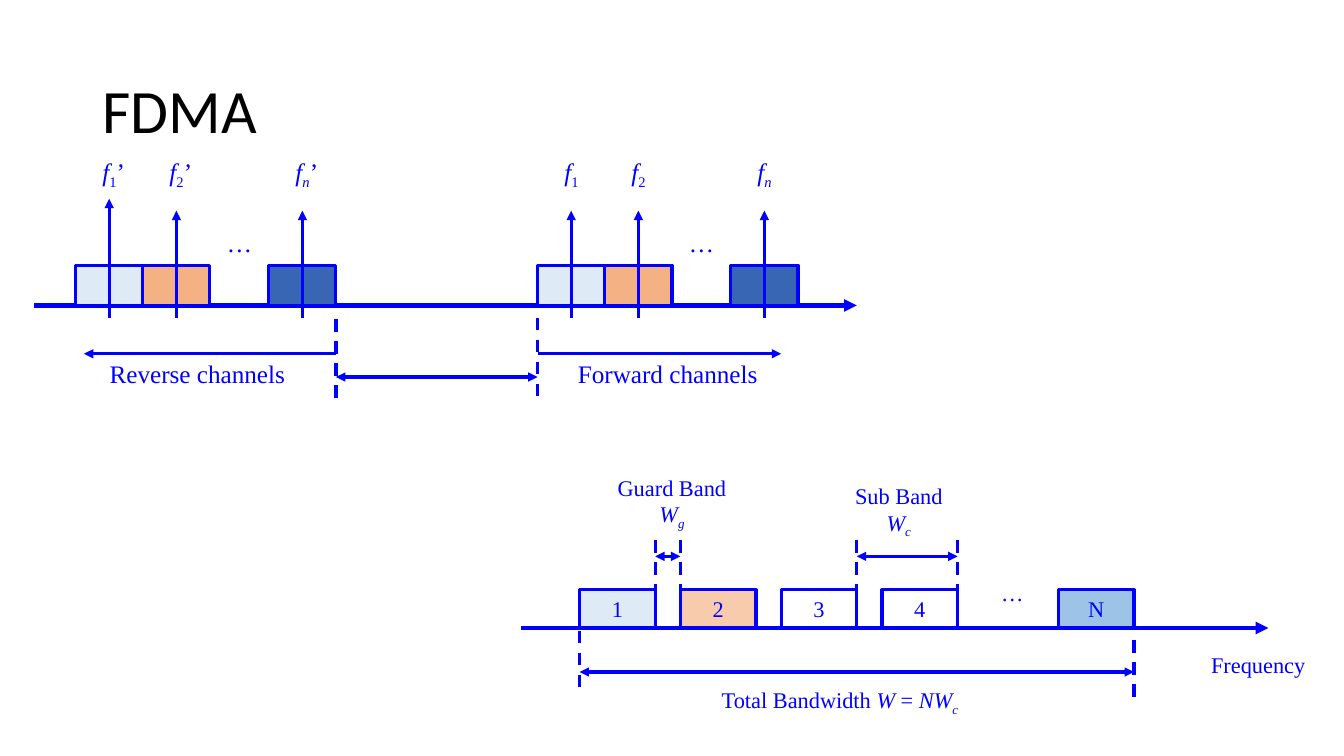
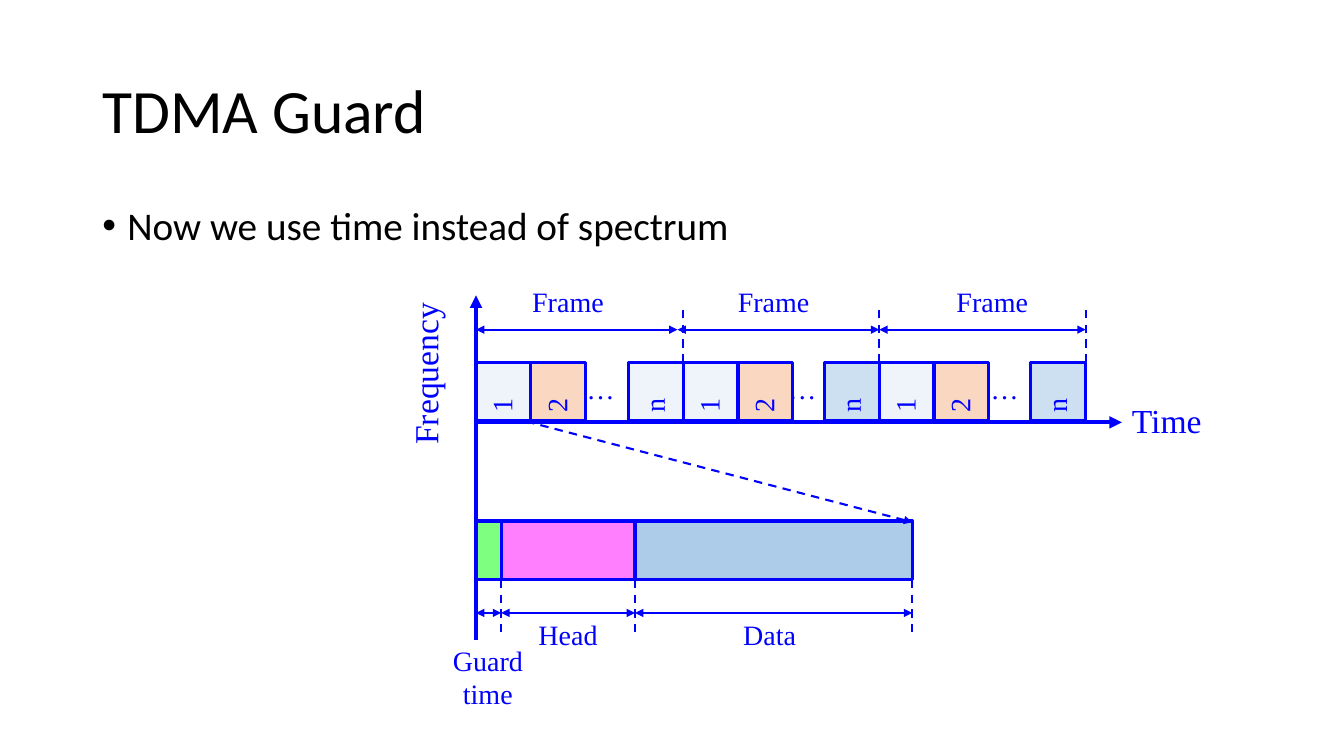
"""Build two slides on channel sharing: FDMA bands and TDMA frames."""
from dataclasses import dataclass
from itertools import pairwise

from lxml.etree import SubElement
from pptx import Presentation
from pptx.dml.color import RGBColor
from pptx.enum.dml import MSO_LINE
from pptx.enum.shapes import MSO_CONNECTOR, MSO_SHAPE
from pptx.enum.text import MSO_ANCHOR as ANCHOR, PP_ALIGN as ALIGN
from pptx.oxml.ns import qn
from pptx.util import Pt


@dataclass(frozen=True)
class Theme:
    ink: str = "0000FF"
    black: str = "000000"
    pale: str = "DEEBF7"
    orange: str = "F4B183"
    peach: str = "F8CBAD"
    sky: str = "9DC3E6"
    navy: str = "3965B5"
    green: str = "00FF00"
    magenta: str = "FF00FF"
    blue: str = "5B9BD5"
    heading: str = "Calibri"
    diagram: str = "Times New Roman"
    title: int = 44
    body: int = 28
    axis_name: int = 24
    frame_text: int = 20
    channel_text: int = 18
    band_text: int = 16
    axis_line: float = 3
    line: float = 2.25
    thin: float = 1.5


T = Theme()
SLIDE_SIZE = 960, 540
TITLE_BOX = 66, 28.8, 828, 104.4
BODY_BOX = 66, 144, 828, 342

CHANNEL_WIDTH, CHANNEL_TOP, CHANNEL_AXIS = 48, 189.5, 218.2
CHANNELS = [(0, "1", "s", T.pale), (48, "2", "s", T.orange), (138, "n", "si", T.navy)]
CHANNEL_GROUPS = [
    {"start": 54, "prime": "’", "tops": (142, 150.5, 150.5), "name": "Reverse channels",
     "name_left": 36, "limit": 240, "limit_top": 228, "arrow_end": 60},
    {"start": 384, "prime": "", "tops": (150.5, 150.5, 150.5), "name": "Forward channels",
     "name_left": 372, "limit": 384, "limit_top": 227, "arrow_end": 558},
]

BAND_WIDTH, BAND_TOP, BAND_AXIS = 54, 421.3, 448.6
BANDS = [(414, "1", T.pale), (486, "2", T.peach), (558, "3", None),
         (630, "4", None), (756, "N", T.sky)]
BAND_MARKS = [
    (468, 486, (426, 334.8, 108, 46), [("Guard Band ", ""), ("W", "i"), ("g", "si")]),
    (612, 684, (597, 340.6, 90, 46), [("Sub Band ", ""), ("W", "i"), ("c", "si")]),
]
TOTAL = [("Total Bandwidth ", ""), ("W", "i"), (" = ", ""), ("NW", "i"), ("c", "si")]

TIME_AXIS, FREQUENCY_AXIS = 301.7, 340
SLOT_WIDTH, SLOT_TOP, SLOT_HEIGHT = 39.2, 258.8, 42
FRAMES = [
    {"start": 340, "end": 488, "dots": 412, "center": 405.7, "last": T.pale},
    {"start": 488, "end": 628, "dots": 556, "center": 552.6, "last": T.sky},
    {"start": 628, "end": 775.5, "dots": 700.6, "center": 708.8, "last": T.sky},
]
FRAME_SPANS = 340, 484, 628, 775.5
PARTS_TOP, PARTS_HEIGHT = 372.2, 42
PART_EDGES = 340, 358, 453.6, 651.6
PART_FILLS = T.green, T.magenta, T.blue
PART_NAMES = [("Guard time", 348.5, 455.8, 96), ("Head", 405.7, 437.8, 84),
              ("Data", 549.7, 437.8, 84)]


def points(*lengths):
    return [Pt(length) for length in lengths]


def fill_text(frame, text, size, font=T.diagram, color=T.ink, align=ALIGN.CENTER,
              anchor=ANCHOR.TOP, wrap=True, spacing=None, before=None, bullet=None):
    frame.word_wrap = wrap
    frame.vertical_anchor = anchor
    paragraph = frame.paragraphs[0]
    paragraph.alignment = align
    paragraph.line_spacing = spacing
    paragraph.space_before = before
    if bullet:
        properties = paragraph._p.get_or_add_pPr()
        properties.set("marL", str(Pt(18)))
        properties.set("indent", str(-Pt(18)))
        SubElement(properties, qn("a:buFont")).set("typeface", "Arial")
        SubElement(properties, qn("a:buChar")).set("char", bullet)
    for words, flags in [(text, "")] if isinstance(text, str) else text:
        run = paragraph.add_run()
        run.text = words
        run.font.name, run.font.size = font, Pt(size)
        run.font.color.rgb = RGBColor.from_string(color)
        run.font.italic = "i" in flags
        if "s" in flags:
            run._r.get_or_add_rPr().set("baseline", "-25000")


def write(slide, text, box, size, rotation=0, **style):
    label = slide.shapes.add_textbox(*points(*box))
    label.rotation = rotation
    fill_text(label.text_frame, text, size, **style)


def draw_box(slide, box, fill=None, alpha=None):
    block = slide.shapes.add_shape(MSO_SHAPE.RECTANGLE, *points(*box))
    block.shadow.inherit = False
    block.line.color.rgb = RGBColor.from_string(T.ink)
    block.line.width = Pt(T.line)
    if fill is None:
        block.fill.background()
        return block
    block.fill.solid()
    block.fill.fore_color.rgb = RGBColor.from_string(fill)
    if alpha:
        color = block._element.spPr.find(qn("a:solidFill")).find(qn("a:srgbClr"))
        SubElement(color, qn("a:alpha")).set("val", str(alpha * 1000))
    return block


def draw_line(slide, start, end, width=T.line, dash=False, arrows=()):
    line = slide.shapes.add_connector(MSO_CONNECTOR.STRAIGHT, *points(*start, *end))
    line.line.color.rgb = RGBColor.from_string(T.ink)
    line.line.width = Pt(width)
    if dash:
        line.line.dash_style = MSO_LINE.DASH
    properties = line._element.spPr
    for arrow in arrows:
        SubElement(properties.find(qn("a:ln")), qn(f"a:{arrow}")).set("type", "triangle")
    SubElement(properties, qn("a:effectLst"))


def draw_arrow(slide, start, end, width=T.line):
    draw_line(slide, start, end, width, arrows=["tailEnd"])


def draw_span(slide, left, right, y, width=T.line):
    draw_line(slide, (left, y), (right, y), width, arrows=["headEnd", "tailEnd"])


def draw_mark(slide, x, top, bottom, width=T.line):
    draw_line(slide, (x, top), (x, bottom), width, dash=True)


def add_slide(deck, title):
    slide = deck.slides.add_slide(deck.slide_layouts[6])
    write(slide, title, TITLE_BOX, T.title, font=T.heading, color=T.black,
          align=ALIGN.LEFT, anchor=ANCHOR.MIDDLE, spacing=0.9)
    return slide


def draw_channels(slide):
    draw_arrow(slide, (24, CHANNEL_AXIS), (612, CHANNEL_AXIS), T.axis_line)
    for group in CHANNEL_GROUPS:
        start, limit = group["start"], group["limit"]
        for offset, index, flags, fill in CHANNELS:
            left = start + offset
            draw_box(slide, (left, CHANNEL_TOP, CHANNEL_WIDTH, 28.8), fill)
            symbol = [("f", "i"), (index, flags)]
            if group["prime"]:
                symbol.append((group["prime"], ""))
            write(slide, symbol, (left + 12, 108, 36, 28.8), T.channel_text,
                  align=ALIGN.LEFT, wrap=False)
        for (offset, *_), top in zip(CHANNELS, group["tops"]):
            middle = start + offset + CHANNEL_WIDTH / 2
            draw_arrow(slide, (middle, 227), (middle, top))
        write(slide, "…", (start + 90, 159, 54, 28.8), T.channel_text)
        draw_mark(slide, limit, group["limit_top"], group["limit_top"] + 60)
        draw_arrow(slide, (limit, 252.7), (group["arrow_end"], 252.7))
        write(slide, group["name"], (group["name_left"], 252.7, 210, 28.8), T.channel_text)
    draw_span(slide, *(group["limit"] for group in CHANNEL_GROUPS), 269.3)


def draw_bands(slide):
    draw_arrow(slide, (372, BAND_AXIS), (906, BAND_AXIS), T.axis_line)
    for left, name, fill in BANDS:
        band = draw_box(slide, (left, BAND_TOP, BAND_WIDTH, 26.7), fill)
        fill_text(band.text_frame, name, T.band_text, anchor=ANCHOR.MIDDLE)
    for left, right, label_box, label in BAND_MARKS:
        for x in (left, right):
            draw_mark(slide, x, 386, 422)
        draw_span(slide, left, right, 397.4)
        write(slide, label, label_box, T.band_text)
    first, last = BANDS[0][0], BANDS[-1][0] + BAND_WIDTH
    draw_mark(slide, first, 450.7, 492.5)
    draw_mark(slide, last, 457.2, 499)
    draw_span(slide, first, last, 480)
    write(slide, TOTAL, (486, 486.7, 228, 26.7), T.band_text)
    write(slide, "…", (696, 410.4, 54, 26.7), T.band_text)
    write(slide, "Frequency", (858, 461.5, 100, 26.7), T.band_text,
          align=ALIGN.LEFT, wrap=False)


def draw_slot(slide, left, name, fill):
    slot = draw_box(slide, (left, SLOT_TOP, SLOT_WIDTH, SLOT_HEIGHT), fill, alpha=50)
    frame = slot.text_frame
    frame._txBody.bodyPr.set("vert", "vert270")
    frame.margin_left = frame.margin_right = Pt(6)
    frame.margin_top = frame.margin_bottom = Pt(6)
    fill_text(frame, name, T.frame_text, align=ALIGN.LEFT)


def draw_frames(slide):
    draw_arrow(slide, (FREQUENCY_AXIS, TIME_AXIS), (801.4, TIME_AXIS), T.axis_line)
    draw_arrow(slide, (FREQUENCY_AXIS, 457), (FREQUENCY_AXIS, 211), T.axis_line)
    write(slide, "Time", (801.4, 282.2, 90, 36), T.axis_name, align=ALIGN.LEFT)
    write(slide, "Frequency", (240.5, 249, 126, 36), T.axis_name, rotation=270)
    for frame in FRAMES:
        start, end = frame["start"], frame["end"]
        write(slide, "…", (frame["dots"], 262, 36, 31), T.frame_text, align=ALIGN.LEFT)
        draw_slot(slide, start, "1", T.pale)
        draw_slot(slide, start + SLOT_WIDTH, "2", T.orange)
        draw_slot(slide, end - SLOT_WIDTH, "n", frame["last"])
        draw_mark(slide, end, 301, 217, T.thin)
        write(slide, "Frame", (frame["center"] - 45, 199.4, 90, 31), T.frame_text)
    for left, right in pairwise(FRAME_SPANS):
        draw_span(slide, left, right, 235.5, T.thin)


def draw_slot_parts(slide):
    bottom = PARTS_TOP + PARTS_HEIGHT
    for (left, right), fill in zip(pairwise(PART_EDGES), PART_FILLS):
        draw_box(slide, (left, PARTS_TOP, right - left, PARTS_HEIGHT), fill, alpha=50)
        draw_mark(slide, right, bottom, bottom + 42, T.thin)
        draw_span(slide, left, right, 437.8, T.thin)
    for name, center, top, width in PART_NAMES:
        write(slide, name, (center - width / 2, top, width, 31), T.frame_text)
    draw_line(slide, (375.8, 301), (PART_EDGES[-1], 373), T.thin, dash=True,
              arrows=["tailEnd"])


def main():
    deck = Presentation()
    deck.slide_width, deck.slide_height = points(*SLIDE_SIZE)
    fdma = add_slide(deck, "FDMA")
    draw_channels(fdma)
    draw_bands(fdma)
    tdma = add_slide(deck, "TDMA Guard")
    write(tdma, "Now we use time instead of spectrum", BODY_BOX, T.body, font=T.heading,
          color=T.black, align=ALIGN.LEFT, spacing=0.9, before=Pt(10), bullet="•")
    draw_frames(tdma)
    draw_slot_parts(tdma)
    deck.save("out.pptx")


if __name__ == "__main__":
    main()
